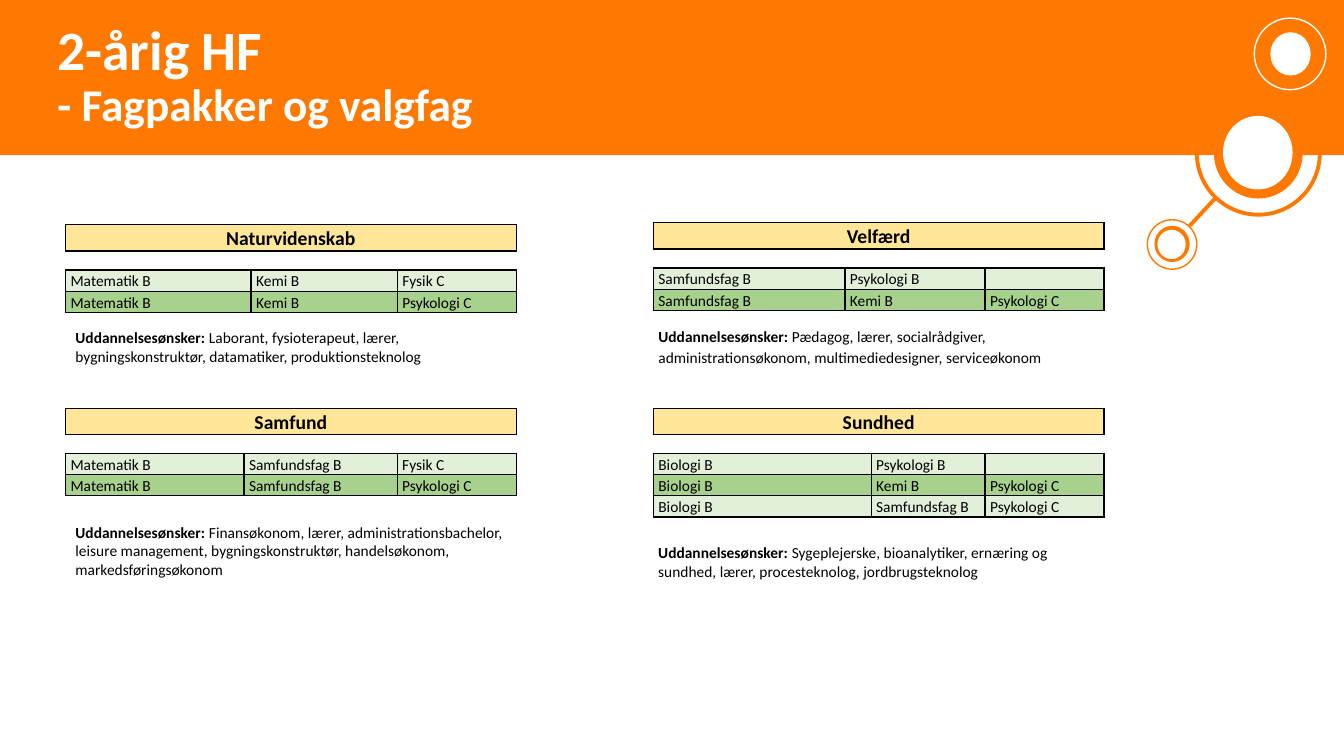
from dataclasses import dataclass

import lxml.etree
import pptx
import pptx.dml.color
import pptx.enum.shapes
import pptx.enum.text
import pptx.oxml.ns
import pptx.util

Inches = pptx.util.Inches
Pt = pptx.util.Pt
RGB = pptx.dml.color.RGBColor.from_string
qn = pptx.oxml.ns.qn
MSO_SHAPE = pptx.enum.shapes.MSO_SHAPE
PP_ALIGN = pptx.enum.text.PP_ALIGN
ANCHOR = pptx.enum.text.MSO_ANCHOR


@dataclass(frozen=True)
class Theme:
    """Colours, typeface and type sizes of the slide."""
    font: str = "Calibri"
    orange: str = "FF7800"
    white: str = "FFFFFF"
    black: str = "000000"
    heading_fill: str = "FFE699"
    row_fills: tuple = ("E2F0D9", "A9D18E")
    title_size: float = 39.6
    subtitle_size: float = 32.4
    heading_size: int = 14
    body_size: int = 11


@dataclass(frozen=True)
class Package:
    """A subject package with its table corner, columns and wishes."""
    name: str
    left: float
    top: float
    columns: tuple
    subjects: tuple
    wishes: str


THEME = Theme()
HEADING_HEIGHT, GAP_HEIGHT, ROW_HEIGHT = 0.26, 0.05, 0.21

NATURE = Package("Naturvidenskab", 0.65, 2.23, (1.84, 1.45, 1.18),
                 (("Matematik B", "Kemi B", "Fysik C"),
                  ("Matematik B", "Kemi B", "Psykologi C")),
                 "Laborant, fysioterapeut, lærer, bygningskonstruktør, "
                 "datamatiker, produktionsteknolog")
WELFARE = Package("Velfærd", 6.48, 2.21, (1.9, 1.39, 1.18),
                  (("Samfundsfag B", "Psykologi B", ""),
                   ("Samfundsfag B", "Kemi B", "Psykologi C")),
                  "Pædagog, lærer, socialrådgiver, administrationsøkonom, "
                  "multimediedesigner, serviceøkonom")
SOCIETY = Package("Samfund", 0.65, 4.05, (1.77, 1.52, 1.18),
                  (("Matematik B", "Samfundsfag B", "Fysik C"),
                   ("Matematik B", "Samfundsfag B", "Psykologi C")),
                  "Finansøkonom, lærer, administrationsbachelor, leisure management, "
                  "bygningskonstruktør, handelsøkonom, markedsføringsøkonom")
HEALTH = Package("Sundhed", 6.48, 4.05, (2.16, 1.13, 1.18),
                 (("Biologi B", "Psykologi B", ""),
                  ("Biologi B", "Kemi B", "Psykologi C"),
                  ("Biologi B", "Samfundsfag B", "Psykologi C")),
                 "Sygeplejerske, bioanalytiker, ernæring og sundhed, lærer, "
                 "procesteknolog, jordbrugsteknolog")


def set_font(font, size, color, bold=False):
    """Give a font the theme typeface with a size, colour and weight."""
    font.name, font.size, font.bold = THEME.font, Pt(size), bold
    font.color.rgb = RGB(color)


def add_plain_shape(slide, kind, box, fill=None, line=None, width=1):
    """Add a shadowless shape with an optional fill and outline."""
    shape = slide.shapes.add_shape(kind, *map(Inches, box))
    shape.shadow.inherit = False
    if fill:
        shape.fill.solid()
        shape.fill.fore_color.rgb = RGB(fill)
    else:
        shape.fill.background()
    if line:
        shape.line.color.rgb = RGB(line)
        shape.line.width = Pt(width)
    else:
        shape.line.fill.background()


def add_header(slide, width, height):
    """Draw the orange band and place the two-line title on it."""
    add_plain_shape(slide, MSO_SHAPE.RECTANGLE, (0, 0, width, height), THEME.orange)
    title = slide.shapes.title
    title.element.getparent().append(title.element)
    title.left, title.top = Inches(0.47), Inches(0.31)
    title.width, title.height = Inches(9.31), Inches(0.91)
    frame = title.text_frame
    frame.auto_size = pptx.enum.text.MSO_AUTO_SIZE.NONE
    frame.vertical_anchor = ANCHOR.MIDDLE
    heading = frame.paragraphs[0]
    heading.alignment, heading.line_spacing = PP_ALIGN.LEFT, 0.9
    first = heading.add_run()
    first.text = "2-årig HF"
    set_font(first.font, THEME.title_size, THEME.white, True)
    heading.add_line_break()
    second = heading.add_run()
    second.text = "- Fagpakker og valgfag"
    set_font(second.font, THEME.subtitle_size, THEME.white, True)


def add_circles(slide, left, top):
    """Draw the linked circles in the corner from their top left point."""
    stem = slide.shapes.add_connector(
        pptx.enum.shapes.MSO_CONNECTOR.STRAIGHT,
        Inches(left + 0.67), Inches(top + 1.79), Inches(left + 0.42), Inches(top + 2.06))
    stem.line.color.rgb = RGB(THEME.orange)
    stem.line.width = Pt(2.75)
    lxml.etree.SubElement(stem.element.spPr, qn("a:effectLst"))
    orange, white = THEME.orange, THEME.white
    circles = (
        (0.66, 0.89, 0.88, 0.9, orange, None, 0),
        (0.75, 0.97, 0.69, 0.73, white, None, 0),
        (0, 2, 0.49, 0.49, None, orange, 1),
        (0.07, 2.06, 0.35, 0.36, orange, None, 0),
        (0.1, 2.1, 0.28, 0.29, white, None, 0),
        (0.49, 0.73, 1.22, 1.22, None, orange, 2.75),
        (1.06, 0, 0.71, 0.71, None, white, 1),
        (1.16, 0.1, 0.51, 0.52, orange, None, 0),
        (1.22, 0.14, 0.4, 0.43, white, None, 0),
    )
    for dx, dy, width, height, fill, line, weight in circles:
        add_plain_shape(slide, MSO_SHAPE.OVAL, (left + dx, top + dy, width, height),
                        fill, line, weight)


def add_grid(slide, left, top, columns, rows):
    """Add an unbanded table with the given column widths and row heights."""
    table = slide.shapes.add_table(len(rows), len(columns), *map(
        Inches, (left, top, sum(columns), sum(rows)))).table
    table.first_row = table.horz_banding = False
    for column, width in zip(table.columns, columns):
        column.width = Inches(width)
    for row, height in zip(table.rows, rows):
        row.height = Inches(height)
    return table


def format_cell(cell, fill=None, sides=""):
    """Set margins, fill and black borders on the named sides of a cell."""
    cell.margin_left = cell.margin_right = Inches(0.05)
    cell.margin_top = cell.margin_bottom = 0
    cell.vertical_anchor = ANCHOR.BOTTOM
    for side in "LRTB":
        border = lxml.etree.SubElement(cell._tc.tcPr, qn(f"a:ln{side}"), w=str(Pt(1)))
        if side in sides:
            paint = lxml.etree.SubElement(border, qn("a:solidFill"))
            lxml.etree.SubElement(paint, qn("a:srgbClr"), val=THEME.black)
        else:
            lxml.etree.SubElement(border, qn("a:noFill"))
    if fill:
        cell.fill.solid()
        cell.fill.fore_color.rgb = RGB(fill)
    else:
        cell.fill.background()


def write_cell(cell, text, size, bold=False):
    """Write the text of a cell, or keep an empty one at text height."""
    entry = cell.text_frame.paragraphs[0]
    if text:
        entry.line_spacing, entry.space_after = 1.07, Pt(8)
        entry.add_run().text = text
        set_font(entry.font, size, THEME.black, bold)
    else:
        lxml.etree.SubElement(entry._p, qn("a:endParaRPr"), sz=str(size * 100))


def add_package(slide, package):
    """Place the table of a package at its corner."""
    heights = [HEADING_HEIGHT, GAP_HEIGHT] + [ROW_HEIGHT] * len(package.subjects)
    table = add_grid(slide, package.left, package.top, package.columns, heights)
    last = len(package.columns) - 1
    heading = table.cell(0, 0)
    heading.merge(table.cell(0, last))
    write_cell(heading, package.name, THEME.heading_size, True)
    heading.text_frame.paragraphs[0].alignment = PP_ALIGN.CENTER
    for index in range(last + 1):
        format_cell(table.cell(0, index), THEME.heading_fill, "LRTB")
        format_cell(table.cell(1, index), sides="TB")
        write_cell(table.cell(1, index), "", THEME.body_size)
        for number, subjects in enumerate(package.subjects):
            cell = table.cell(number + 2, index)
            format_cell(cell, THEME.row_fills[number % 2], "LRTB")
            write_cell(cell, subjects[index], THEME.body_size)


def write_wishes(paragraph, wishes):
    """Write the bold label and the education wishes."""
    for text, bold in (("Uddannelsesønsker: ", True), (wishes, False)):
        run = paragraph.add_run()
        run.text = text
        set_font(run.font, THEME.body_size, THEME.black, bold)


def add_wishes_table(slide, left, top, width, wishes):
    """Place the wishes in a borderless table with an empty last row."""
    table = add_grid(slide, left, top, (width,), (0.38, ROW_HEIGHT))
    for row in range(2):
        format_cell(table.cell(row, 0))
    label = table.cell(0, 0).text_frame.paragraphs[0]
    label.line_spacing, label.space_after = 1.07, Pt(8)
    write_wishes(label, wishes)
    write_cell(table.cell(1, 0), "", THEME.body_size)


def add_wishes_box(slide, left, top, width, height, wishes):
    """Place the wishes in a wrapping text box."""
    frame = slide.shapes.add_textbox(*map(Inches, (left, top, width, height))).text_frame
    frame.word_wrap = True
    write_wishes(frame.paragraphs[0], wishes)


def main():
    """Build the slide and save it."""
    deck = pptx.Presentation()
    deck.slide_width, deck.slide_height = Inches(13.33), Inches(7.5)
    slide = deck.slides.add_slide(deck.slide_layouts[5])
    add_header(slide, 13.33, 1.54)
    add_circles(slide, 11.38, 0.18)
    for package in (NATURE, WELFARE, SOCIETY, HEALTH):
        add_package(slide, package)
    add_wishes_table(slide, 6.48, 3.24, 4.46, WELFARE.wishes)
    add_wishes_box(slide, 6.43, 5.34, 4.52, 0.47, HEALTH.wishes)
    add_wishes_box(slide, 0.65, 3.21, 4.47, 0.47, NATURE.wishes)
    add_wishes_box(slide, 0.65, 5.14, 4.47, 0.66, SOCIETY.wishes)
    deck.save("out.pptx")


if __name__ == "__main__":
    main()
